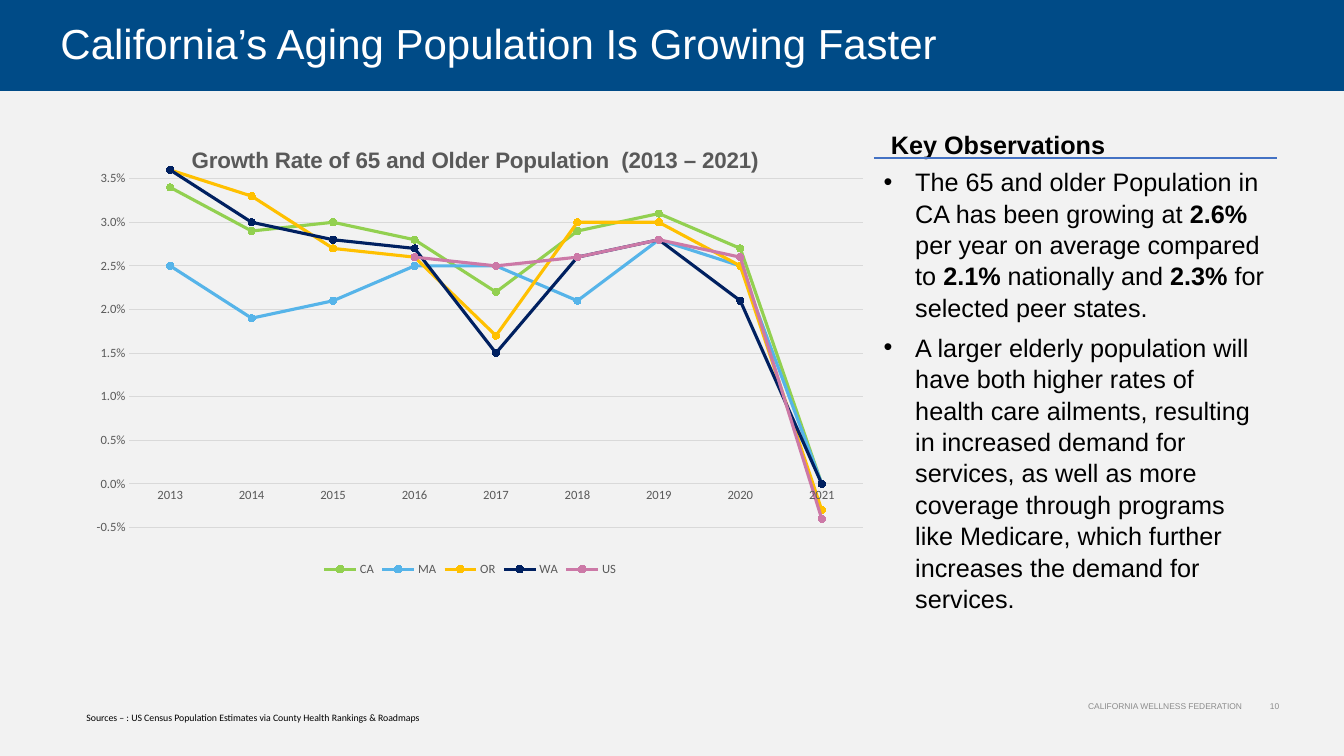
import pptx
import pptx.chart.data
import pptx.dml.color
import pptx.enum.chart
import pptx.enum.shapes
import pptx.enum.text
import pptx.oxml
import pptx.oxml.ns
import pptx.util

Pt = pptx.util.Pt
qn = pptx.oxml.ns.qn
ALIGN = pptx.enum.text.PP_ALIGN
ANCHOR = pptx.enum.text.MSO_ANCHOR

BLACK, GRAY, GRID, FOOTER = "000000", "595959", "D9D9D9", "8C8C8C"
YEARS = [str(year) for year in range(2013, 2022)]
GROWTH = [
    ("CA", "92D050", [0.034, 0.029, 0.03, 0.028, 0.022, 0.029, 0.031, 0.027, 0]),
    ("MA", "56B4E9", [0.025, 0.019, 0.021, 0.025, 0.025, 0.021, 0.028, 0.025, 0]),
    ("OR", "FFC000", [0.036, 0.033, 0.027, 0.026, 0.017, 0.03, 0.03, 0.025, -0.003]),
    ("WA", "002060", [0.036, 0.03, 0.028, 0.027, 0.015, 0.026, 0.028, 0.021, 0]),
    ("US", "CC79A7", [None, None, None, 0.026, 0.025, 0.026, 0.028, 0.026, -0.004]),
]
# Each observation is a list of (text, bold) runs.
OBSERVATIONS = [
    [("The 65 and older Population in CA has been growing at ", False),
     ("2.6% ", True), ("per year on average compared to ", False),
     ("2.1% ", True), ("nationally and", False), (" 2.3% ", True),
     ("for selected peer states.", False)],
    [("A larger elderly population will have both higher rates of health care "
      "ailments, resulting in increased demand for services, as well as more "
      "coverage through programs like Medicare, which further increases the "
      "demand for services.", False)],
]


def color(value):
    return pptx.dml.color.RGBColor.from_string(value)


def style_font(font, size, value, name="Arial", bold=False):
    font.size, font.name, font.bold = Pt(size), name, bold
    font.color.rgb = color(value)


def add_span(para, text, size, value, name="Arial", bold=False):
    span = para.add_run()
    span.text = text
    style_font(span.font, size, value, name, bold)


def add_box(shapes, left, top, width, height, anchor=ANCHOR.TOP):
    """Add a wrapping text box and return its text frame."""
    frame = shapes.add_textbox(Pt(left), Pt(top), Pt(width), Pt(height)).text_frame
    frame.word_wrap = True
    frame.vertical_anchor = anchor
    return frame


def add_bullet(para, indent):
    properties = para._p.get_or_add_pPr()
    properties.set("marL", str(Pt(indent)))
    properties.set("indent", str(-Pt(indent)))
    for tag, key, value in (("buFont", "typeface", "Arial"), ("buChar", "char", "•")):
        properties.append(pptx.oxml.parse_xml(
            f'<a:{tag} {pptx.oxml.ns.nsdecls("a")} {key}="{value}"/>'))


def set_layout(parent, index, **settings):
    """Place a chart part by hand, in fractions of the chart."""
    for old in parent.findall(qn("c:layout")):
        parent.remove(old)
    entries = "".join(f'<c:{tag} val="{value}"/>' for tag, value in settings.items())
    parent.insert(index, pptx.oxml.parse_xml(
        f'<c:layout {pptx.oxml.ns.nsdecls("c")}><c:manualLayout>{entries}'
        '</c:manualLayout></c:layout>'))


def add_title(page, text):
    title = page.shapes.title
    title.left, title.top, title.width, title.height = 0, 0, Pt(960), Pt(65)
    title.fill.solid()
    title.fill.fore_color.rgb = color("004B87")
    frame = title.text_frame
    frame.auto_size = pptx.enum.text.MSO_AUTO_SIZE.NONE
    frame.vertical_anchor = ANCHOR.MIDDLE
    frame.margin_left = Pt(43.2)
    para = frame.paragraphs[0]
    para.alignment, para.line_spacing = ALIGN.LEFT, 0.9
    add_span(para, text, 30, "FFFFFF")


def style_axes(chart):
    years, rates = chart.category_axis, chart.value_axis
    for axis in (years, rates):
        axis.major_tick_mark = axis.minor_tick_mark = pptx.enum.chart.XL_TICK_MARK.NONE
        style_font(axis.tick_labels.font, 9, GRAY, "Calibri")
    rates.minimum_scale, rates.maximum_scale = -0.005, 0.036
    rates.major_unit = 0.005
    rates.tick_labels.number_format = "0.0%"
    rates.tick_labels.number_format_is_linked = False
    rates.format.line.fill.background()
    for line in (years.format.line, rates.major_gridlines.format.line):
        line.color.rgb, line.width = color(GRID), Pt(0.75)


def add_growth_chart(page):
    data = pptx.chart.data.CategoryChartData(number_format="0.0%")
    data.categories = YEARS
    for state, _, rates in GROWTH:
        data.add_series(state, rates)
    chart = page.shapes.add_chart(
        pptx.enum.chart.XL_CHART_TYPE.LINE_MARKERS,
        Pt(47.5), Pt(88.5), Pt(576.7), Pt(326.2), data).chart
    style_font(chart.font, 10, BLACK, "Calibri")
    chart.plots[0].vary_by_categories = False
    for series, (_, value, _) in zip(chart.plots[0].series, GROWTH):
        series.smooth = False
        series.format.line.color.rgb = color(value)
        series.format.line.width = Pt(2.25)
        marker = series.marker
        marker.style, marker.size = pptx.enum.chart.XL_MARKER_STYLE.CIRCLE, 5
        marker.format.fill.solid()
        marker.format.fill.fore_color.rgb = color(value)
        marker.format.line.color.rgb = color(value)
    style_axes(chart)

    chart.has_title = True
    add_span(chart.chart_title.text_frame.paragraphs[0],
             "Growth Rate of 65 and Older Population  (2013 – 2021)",
             16, GRAY, bold=True)
    chart.has_legend = True
    chart.legend.position = pptx.enum.chart.XL_LEGEND_POSITION.BOTTOM
    chart.legend.include_in_layout = False
    style_font(chart.legend.font, 9, GRAY, "Calibri")

    root = chart.element
    set_layout(root.find(".//" + qn("c:title")), 1,
               xMode="edge", yMode="edge", x=0.15, y=0.04)
    set_layout(root.find(".//" + qn("c:plotArea")), 0, layoutTarget="inner",
               xMode="edge", yMode="edge", x=0.078, y=0.101, w=0.908, h=0.783)


def add_rule(shapes, left, right, top):
    rule = shapes.add_connector(pptx.enum.shapes.MSO_CONNECTOR.STRAIGHT,
                                Pt(left), Pt(top), Pt(right), Pt(top))
    rule.line.color.rgb, rule.line.width = color("4472C4"), Pt(1.5)
    rule._element.spPr.append(pptx.oxml.parse_xml(
        f'<a:effectLst {pptx.oxml.ns.nsdecls("a")}/>'))


def add_observations(page):
    shapes = page.shapes.add_group_shape().shapes
    heading = add_box(shapes, 629.3, 88.5, 224.6, 26).paragraphs[0]
    add_span(heading, "Key Observations", 18, BLACK, bold=True)
    add_rule(shapes, 624.2, 912.2, 113)
    frame = add_box(shapes, 624.2, 114.5, 288, 360)
    for number, spans in enumerate(OBSERVATIONS):
        para = frame.add_paragraph() if number else frame.paragraphs[0]
        para.space_after, para.line_spacing = Pt(6), 1.04
        add_bullet(para, 22.5)
        for text, bold in spans:
            add_span(para, text, 18, BLACK, bold=bold)


def add_footer(page):
    for text, left, width in (("CALIFORNIA WELLNESS FEDERATION", 318.2, 576),
                              ("10", 896.4, 24.5)):
        para = add_box(page.shapes, left, 490.3, width, 28.8, ANCHOR.MIDDLE).paragraphs[0]
        para.alignment = ALIGN.RIGHT
        add_span(para, text, 6, FOOTER)
    sources = add_box(page.shapes, 54.7, 504.7, 830.2, 15.8).paragraphs[0]
    add_span(sources, "Sources – : US Census Population Estimates via "
             "County Health Rankings & Roadmaps", 7, BLACK, "Calibri")


def main():
    deck = pptx.Presentation()
    deck.slide_width, deck.slide_height = Pt(960), Pt(540)
    page = deck.slides.add_slide(deck.slide_layouts.get_by_name("Title Only"))
    page.background.fill.solid()
    page.background.fill.fore_color.rgb = color("F2F2F2")
    add_title(page, "California’s Aging Population Is Growing Faster")
    add_growth_chart(page)
    add_observations(page)
    add_footer(page)
    deck.save("out.pptx")


if __name__ == "__main__":
    main()
